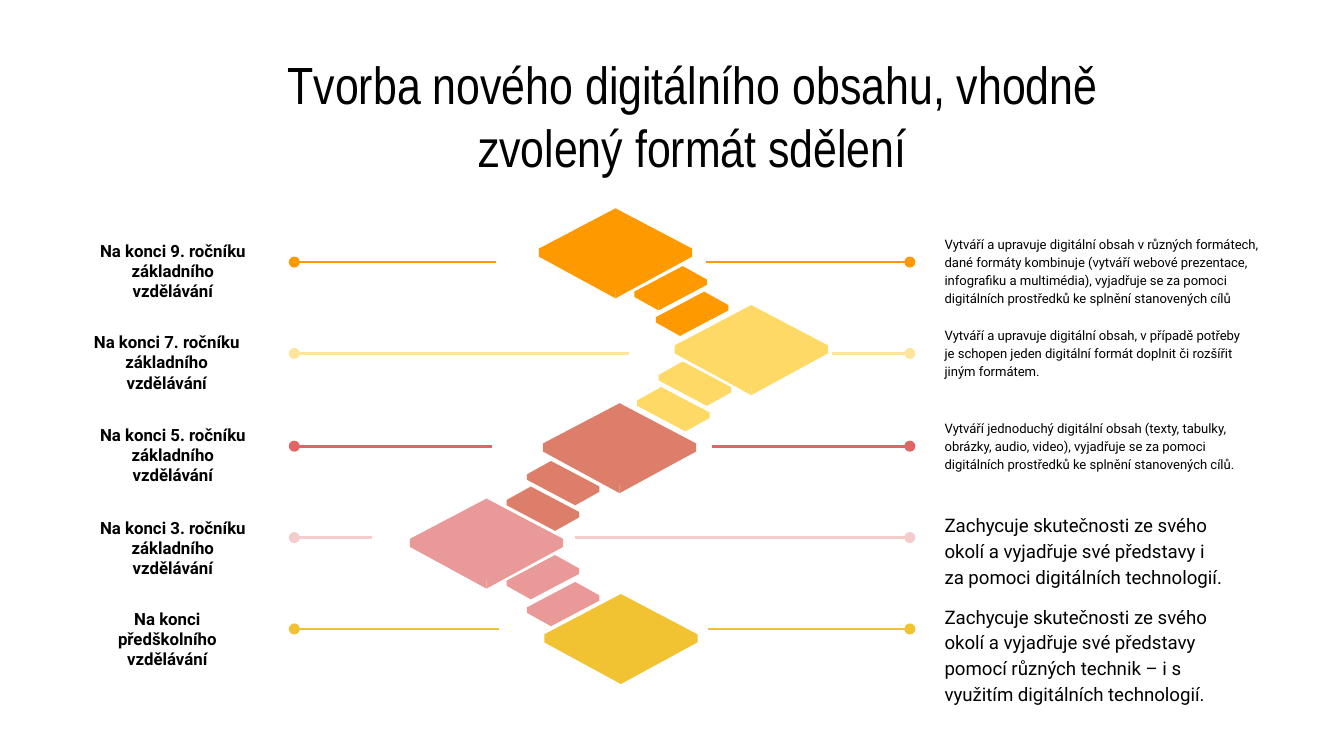
from collections import namedtuple

from lxml.etree import SubElement
from pptx import Presentation
from pptx.dml.color import RGBColor
from pptx.enum.shapes import MSO_CONNECTOR
from pptx.enum.text import MSO_ANCHOR, MSO_AUTO_SIZE, PP_ALIGN
from pptx.oxml.ns import qn
from pptx.util import Pt

PX = 9144  # 100 px to the inch

BLACK = RGBColor(0x00, 0x00, 0x00)
ORANGE = RGBColor(0xFF, 0x99, 0x00)
YELLOW = RGBColor(0xFF, 0xD9, 0x66)
CREAM = RGBColor(0xFF, 0xE5, 0x99)
CORAL = RGBColor(0xDD, 0x7E, 0x6B)
RED = RGBColor(0xE0, 0x66, 0x66)
PINK = RGBColor(0xEA, 0x99, 0x99)
BLUSH = RGBColor(0xF4, 0xCC, 0xCC)
GOLD = RGBColor(0xF1, 0xC2, 0x32)

TITLE = "Tvorba nového digitálního obsahu, vhodně zvolený formát sdělení"

# Corners in the order left, top, right, bottom
TILE = [(0, 30), (57, 0), (114, 30), (57, 61)]
FALL = [(0, 10), (18, 0), (54, 19), (36, 29)]
RISE = [(54 - x, y) for x, y in (FALL[2], FALL[1], FALL[0], FALL[3])]

# tile: left, top; steps: left, top of each; ends: inner ends of both lines;
# label: left, width; note: width, size
Level = namedtuple("Level", "fill line tile form steps ends label head note text")

LEVELS = [
    Level(ORANGE, ORANGE, (401, 155), RISE, [(472, 198), (488, 217)],
          (369, 525), (64, 129), "Na konci 9. ročníku základního vzdělávání",
          (259, 7),
          "Vytváří a upravuje digitální obsah v různých formátech, dané "
          "formáty kombinuje (vytváří webové prezentace, infografiku a "
          "multimédia), vyjadřuje se za pomoci digitálních prostředků ke "
          "splnění stanovených cílů"),
    Level(YELLOW, CREAM, (502, 227), FALL, [(490, 269), (474, 288)],
          (468, 619), (55, 138), "Na konci 7. ročníku základního vzdělávání",
          (249, 7),
          "Vytváří a upravuje digitální obsah, v případě potřeby je schopen "
          "jeden digitální formát doplnit či rozšířit jiným formátem."),
    Level(CORAL, RED, (404, 300), FALL, [(392, 343), (377, 362)],
          (366, 530), (64, 129), "Na konci 5. ročníku základního vzdělávání",
          (249, 7),
          "Vytváří jednoduchý digitální obsah (texty, tabulky, obrázky, "
          "audio, video), vyjadřuje se za pomoci digitálních prostředků ke "
          "splnění stanovených cílů."),
    Level(PINK, BLUSH, (305, 371), RISE, [(377, 413), (392, 433)],
          (277, 428), (64, 129), "Na konci 3. ročníku základního\nvzdělávání",
          (227, 10),
          "Zachycuje skutečnosti ze svého okolí a vyjadřuje své představy i "
          "za pomoci digitálních technologií."),
    Level(GOLD, GOLD, (405, 442), FALL, [],
          (371, 527), (73, 103), "Na konci předškolního vzdělávání",
          (227, 10),
          "Zachycuje skutečnosti ze svého okolí a vyjadřuje své představy "
          "pomocí různých technik – i s využitím digitálních technologií."),
]


def place(shape, left, top, width, height):
    shape.left, shape.top = left * PX, top * PX
    shape.width, shape.height = width * PX, height * PX


def style(shape, font, size, align, anchor, bold=False, space=None):
    frame = shape.text_frame
    frame.word_wrap = True
    frame.auto_size = MSO_AUTO_SIZE.NONE
    frame.vertical_anchor = anchor
    frame.margin_left = frame.margin_right = 10 * PX
    frame.margin_top = frame.margin_bottom = 10 * PX
    for para in frame.paragraphs:
        para.alignment = align
        para.line_spacing = space
        for run in para.runs:
            run.font.name = font
            run.font.size = Pt(size)
            run.font.bold = bold
            run.font.color.rgb = BLACK


def add_title(slide):
    title = slide.shapes.title
    place(title, 203, 59, 624, 53)
    title.text_frame.text = TITLE
    style(title, "Arial Narrow", 28, PP_ALIGN.CENTER, MSO_ANCHOR.MIDDLE)


def add_text(slide, box, text, *look, **more):
    shape = slide.shapes.add_textbox(*(n * PX for n in box))
    shape.text_frame.text = text
    style(shape, "Roboto", *look, **more)


def add_face(group, points, color):
    pen = group.shapes.build_freeform(*points[0], scale=PX)
    pen.add_line_segments(points[1:], close=True)
    face = pen.convert_to_shape()
    face.shadow.inherit = False
    face.fill.solid()
    face.fill.fore_color.rgb = color
    face.line.fill.background()


def add_block(group, form, left, top, depth, color):
    """Draw a slab: two side faces that tuck under the top face."""
    points = [(left + x, top + y) for x, y in form]
    base = points[3]
    for side in (points[0], points[2]):
        tuck = ((side[0] + base[0]) // 2, (side[1] + base[1]) // 2 - depth)
        add_face(group, [side, (side[0], side[1] + depth),
                         (base[0], base[1] + depth), base, tuck], color)
    add_face(group, points, color)


def add_line(slide, start, end, y, color):
    line = slide.shapes.add_connector(
        MSO_CONNECTOR.STRAIGHT, start * PX, y * PX, end * PX, y * PX)
    line.line.color.rgb = color
    line.line.width = Pt(1.5)
    SubElement(line.line._get_or_add_ln(), qn("a:headEnd"), type="oval")
    SubElement(line._element.spPr, qn("a:effectLst"))


def add_level(slide, level, row):
    # Stair blocks
    group = slide.shapes.add_group_shape()
    for left, top in level.steps:
        add_block(group, level.form, left, top, 4, level.fill)
    add_block(group, TILE, *level.tile, 6, level.fill)

    # Lines with a dot at the outer end
    y = round(195 + 68.25 * row)
    for start, end in zip((219, 677), level.ends):
        add_line(slide, start, end, y, level.line)

    # Label on the left, note on the right
    top = round(164 + 68.5 * row)
    left, width = level.label
    add_text(slide, (left, top + 14, width, 47), level.head,
             9, PP_ALIGN.CENTER, MSO_ANCHOR.MIDDLE, bold=True)
    width, size = level.note
    add_text(slide, (693, top, width, 61), level.text,
             size, PP_ALIGN.LEFT, MSO_ANCHOR.TOP, space=1.15)


def main():
    deck = Presentation()
    deck.slide_width = 1000 * PX
    deck.slide_height = deck.slide_width * 9 // 16
    slide = deck.slides.add_slide(deck.slide_layouts[5])
    add_title(slide)
    for row, level in enumerate(LEVELS):
        add_level(slide, level, row)
    deck.save("out.pptx")


if __name__ == "__main__":
    main()
